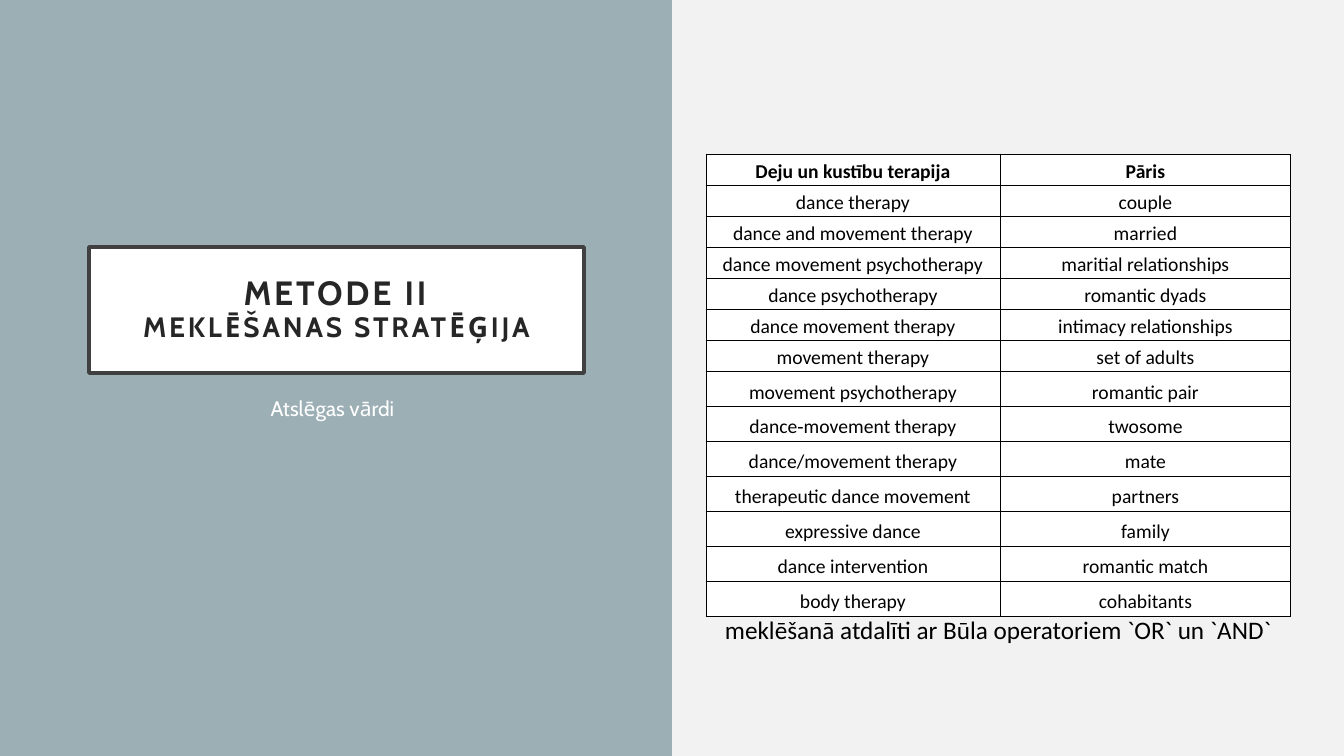
from lxml import etree
from pptx import Presentation
from pptx.dml.color import RGBColor
from pptx.enum.shapes import MSO_SHAPE
from pptx.enum.text import MSO_ANCHOR, PP_ALIGN
from pptx.oxml.ns import qn
from pptx.util import Emu, Pt

RECTANGLE = MSO_SHAPE.RECTANGLE
TOP, MIDDLE, BOTTOM = MSO_ANCHOR.TOP, MSO_ANCHOR.MIDDLE, MSO_ANCHOR.BOTTOM
LEFT, CENTER = PP_ALIGN.LEFT, PP_ALIGN.CENTER

EMU_PER_PX = 914400 / 100.8
SLIDE_WIDTH, SLIDE_HEIGHT = 1344, 756

COLORS = {
    "background": "F2F2F2",
    "panel": "9BAFB5",
    "white": "FFFFFF",
    "frame": "404040",
    "title": "262626",
    "black": "000000",
}

KEYWORDS = [
    ("Deju un kustību terapija", "Pāris"),
    ("dance therapy", "couple"),
    ("dance and movement therapy", "married"),
    ("dance movement psychotherapy", "maritial relationships"),
    ("dance psychotherapy", "romantic dyads"),
    ("dance movement therapy", "intimacy relationships"),
    ("movement therapy", "set of adults"),
    ("movement psychotherapy", "romantic pair"),
    ("dance‐movement therapy", "twosome"),
    ("dance/movement therapy", "mate"),
    ("therapeutic dance movement", "partners"),
    ("expressive dance", "family"),
    ("dance intervention", "romantic match"),
    ("body therapy", "cohabitants"),
]
COLUMN_WIDTHS = [294, 291]
ROW_HEIGHTS = [30] + [29] * 6 + [35] * 7


def px(length):
    return Emu(round(length * EMU_PER_PX))


def color(name):
    return RGBColor.from_string(COLORS[name])


def set_attributes(target, values):
    for name, value in values.items():
        setattr(target, name, value)


def add_run(paragraph, text, size, font, color_name, bold=False):
    run = paragraph.add_run()
    run.text = text
    set_attributes(run.font, {"name": font, "size": Pt(size), "bold": bold})
    run.font.color.rgb = color(color_name)
    return run


def add_rectangle(slide, box, fill):
    shape = slide.shapes.add_shape(RECTANGLE, *map(px, box))
    shape.shadow.inherit = False
    shape.fill.solid()
    shape.fill.fore_color.rgb = color(fill)
    shape.line.fill.background()
    return shape


def add_title(slide, box):
    shape = add_rectangle(slide, box, "white")
    shape.line.color.rgb = color("frame")
    shape.line.width = Pt(2.5)
    frame = shape.text_frame
    margins = ("margin_left", "margin_top", "margin_right", "margin_bottom")
    set_attributes(frame, dict.fromkeys(margins, px(20)))
    set_attributes(frame, {"word_wrap": True, "vertical_anchor": MIDDLE})
    paragraph = frame.paragraphs[0]
    set_attributes(paragraph, {"alignment": CENTER, "line_spacing": 0.9})
    heading = add_run(paragraph, "METODE II", 24, "Cabin", "title", True)
    paragraph.add_line_break()
    subheading = add_run(paragraph, "MEKLĒŠANAS STRATĒĢIJA", 20, "Cabin", "title", True)
    for run in (heading, subheading):
        run.font._element.set("spc", "200")


def add_text(slide, box, text, run_format, paragraph_format, margin_top=5):
    frame = slide.shapes.add_textbox(*map(px, box)).text_frame
    set_attributes(frame, {"word_wrap": True, "vertical_anchor": TOP,
                           "margin_top": px(margin_top)})
    paragraph = frame.paragraphs[0]
    set_attributes(paragraph, paragraph_format)
    add_run(paragraph, text, *run_format)


def add_borders(cell):
    """Draw a thin black line on all four sides; borders precede the fill in tcPr."""
    properties = cell._tc.get_or_add_tcPr()
    for index, side in enumerate(("a:lnL", "a:lnR", "a:lnT", "a:lnB")):
        line = etree.Element(qn(side), w=str(Pt(0.75)))
        fill = etree.SubElement(line, qn("a:solidFill"))
        etree.SubElement(fill, qn("a:srgbClr"), val=COLORS["black"])
        properties.insert(index, line)


def fill_cell(cell, text, bold):
    set_attributes(cell, {
        "vertical_anchor": BOTTOM,
        "margin_left": px(3), "margin_right": px(3),
        "margin_top": px(2), "margin_bottom": px(2),
    })
    cell.fill.solid()
    cell.fill.fore_color.rgb = color("white")
    add_borders(cell)
    paragraph = cell.text_frame.paragraphs[0]
    set_attributes(paragraph, {"alignment": CENTER, "line_spacing": 1.15})
    add_run(paragraph, text, 14, "Calibri", "black", bold)


def add_keyword_table(slide, left, top):
    box = (left, top, sum(COLUMN_WIDTHS), sum(ROW_HEIGHTS))
    table = slide.shapes.add_table(
        len(KEYWORDS), len(COLUMN_WIDTHS), *map(px, box)).table
    set_attributes(table, {"first_row": False, "horz_banding": False})
    for column, width in zip(table.columns, COLUMN_WIDTHS):
        column.width = px(width)
    for row_index, (row, height) in enumerate(zip(table.rows, ROW_HEIGHTS)):
        row.height = px(height)
        for cell, text in zip(row.cells, KEYWORDS[row_index]):
            fill_cell(cell, text, bold=row_index == 0)


def add_title_panel(slide, left, top, width, height):
    add_rectangle(slide, (left, top, width, height), "panel")
    add_title(slide, (left + 89, top + 247, 495, 126))
    add_text(slide, (left + 123, top + 391, 419, 242), "Atslēgas vārdi",
             (15, "Cabin", "white"),
             {"alignment": CENTER, "space_before": Pt(10)})


def add_keyword_panel(slide, left, top):
    add_text(slide, (left + 43, top + 124, 603, 623),
             "meklēšanā atdalīti ar Būla operatoriem `OR` un `AND`",
             (18, "Calibri", "black"), {"alignment": LEFT}, margin_top=490)
    add_keyword_table(slide, left + 34, top + 154)


def main():
    presentation = Presentation()
    presentation.slide_width = px(SLIDE_WIDTH)
    presentation.slide_height = px(SLIDE_HEIGHT)
    slide = presentation.slides.add_slide(presentation.slide_layouts[6])
    slide.background.fill.solid()
    slide.background.fill.fore_color.rgb = color("background")
    half = SLIDE_WIDTH // 2
    add_title_panel(slide, 0, 0, half, SLIDE_HEIGHT)
    add_keyword_panel(slide, half, 0)
    presentation.save("out.pptx")


if __name__ == "__main__":
    main()
